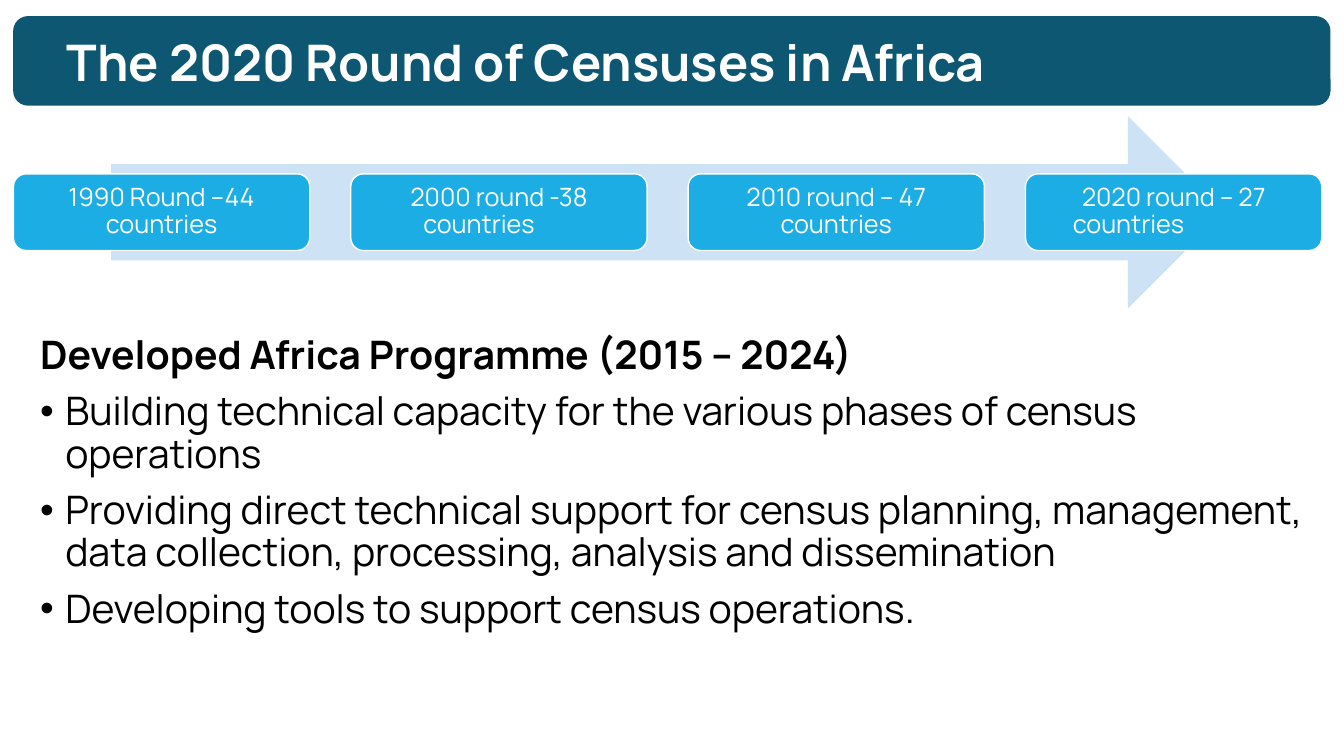
from dataclasses import dataclass

from lxml.etree import SubElement
from pptx import Presentation
from pptx.dml.color import RGBColor
from pptx.enum.shapes import MSO_SHAPE as Shape
from pptx.enum.text import MSO_ANCHOR as Anchor, PP_ALIGN as Align
from pptx.oxml.ns import qn
from pptx.util import Pt


@dataclass(frozen=True)
class Theme:
    """Hold the colours, font and type sizes of the slide."""
    teal: str = "0E5772"
    blue: str = "1CADE4"
    pale: str = "CDE3F5"
    white: str = "FFFFFF"
    black: str = "000000"
    font: str = "Manrope"
    title: int = 36
    body: int = 28
    label: int = 18


THEME = Theme()
ROUNDS = [
    "1990 Round –44 countries",
    "2000 round -38 countries\t",
    "2010 round – 47 countries",
    "2020 round – 27 countries\t\t",
]
HEADING = "Developed Africa Programme (2015 – 2024)"
ACTIVITIES = [
    "Building technical capacity for the various phases of census operations",
    "Providing direct technical support for census planning, management, "
    "data collection, processing, analysis and dissemination",
    "Developing tools to support census operations.",
]


def add_span(para, text, size, color, bold=False):
    """Add one styled run to a paragraph."""
    span = para.add_run()
    span.text = text
    span.font.name = THEME.font
    span.font.size = Pt(size)
    span.font.bold = bold
    span.font.color.rgb = RGBColor.from_string(color)


def add_block(page, kind, box, fill, outline=None):
    """Add a flat filled shape with an optional outline."""
    block = page.shapes.add_shape(kind, *map(Pt, box))
    block.shadow.inherit = False
    block.fill.solid()
    block.fill.fore_color.rgb = RGBColor.from_string(fill)
    if outline:
        block.line.color.rgb = RGBColor.from_string(outline)
        block.line.width = Pt(1)
    else:
        block.line.fill.background()
    return block


def set_frame(frame, inset):
    """Wrap and vertically centre text inside equal insets."""
    frame.word_wrap = True
    frame.vertical_anchor = Anchor.MIDDLE
    frame.margin_left = frame.margin_right = Pt(inset)
    frame.margin_top = frame.margin_bottom = Pt(inset)


def set_indent(para, left, first=0, bullet=None):
    """Set a paragraph's indents and its optional bullet."""
    props = para._p.get_or_add_pPr()
    props.set("marL", str(Pt(left)))
    props.set("indent", str(Pt(first)))
    if bullet:
        SubElement(props, qn("a:buFont")).set("typeface", "Arial")
        SubElement(props, qn("a:buChar")).set("char", bullet)


def add_title(page, box):
    """Draw the title banner."""
    banner = add_block(page, Shape.ROUNDED_RECTANGLE, box, THEME.teal)
    set_frame(banner.text_frame, 7.2)
    para = banner.text_frame.paragraphs[0]
    para.alignment = Align.LEFT
    set_indent(para, 28)
    add_span(para, "The 2020 Round of Censuses in Africa",
             THEME.title, THEME.white, True)


def add_timeline(page, box):
    """Draw the arrow with evenly spaced census round cards over it."""
    left, top, width, height = box
    arrow_width, card_width, card_height = 795, 211.7, 54.8
    arrow_left = left + (width - arrow_width) / 2
    add_block(page, Shape.RIGHT_ARROW,
              (arrow_left, top, arrow_width, height), THEME.pale)
    pitch = (width - card_width) / (len(ROUNDS) - 1)
    card_top = top + (height - card_height) / 2
    for index, label in enumerate(ROUNDS):
        card = add_block(page, Shape.ROUNDED_RECTANGLE,
                         (left + index * pitch, card_top, card_width, card_height),
                         THEME.blue, THEME.white)
        set_frame(card.text_frame, 5.2)
        para = card.text_frame.paragraphs[0]
        para.alignment = Align.CENTER
        para.line_spacing = 0.9
        add_span(para, label, THEME.label, THEME.white)


def add_programme(page, box):
    """Write the programme heading and its bulleted activities."""
    frame = page.shapes.add_textbox(*map(Pt, box)).text_frame
    frame.word_wrap = True
    heading = frame.paragraphs[0]
    heading.line_spacing = 0.9
    add_span(heading, HEADING, THEME.body, THEME.black, True)
    for activity in ACTIVITIES:
        para = frame.add_paragraph()
        para.line_spacing = 0.9
        para.space_before = Pt(10)
        set_indent(para, 18, -18, "•")
        add_span(para, activity, THEME.body, THEME.black)


def main():
    """Build and save the one-slide deck."""
    deck = Presentation()
    deck.slide_width, deck.slide_height = Pt(960), Pt(540)
    page = deck.slides.add_slide(deck.slide_layouts[6])
    add_title(page, (9.4, 11.5, 941, 64))
    add_programme(page, (21.6, 236.2, 916.6, 268.6))
    add_timeline(page, (9.6, 82.8, 934.6, 137.5))
    deck.save("out.pptx")


if __name__ == "__main__":
    main()
